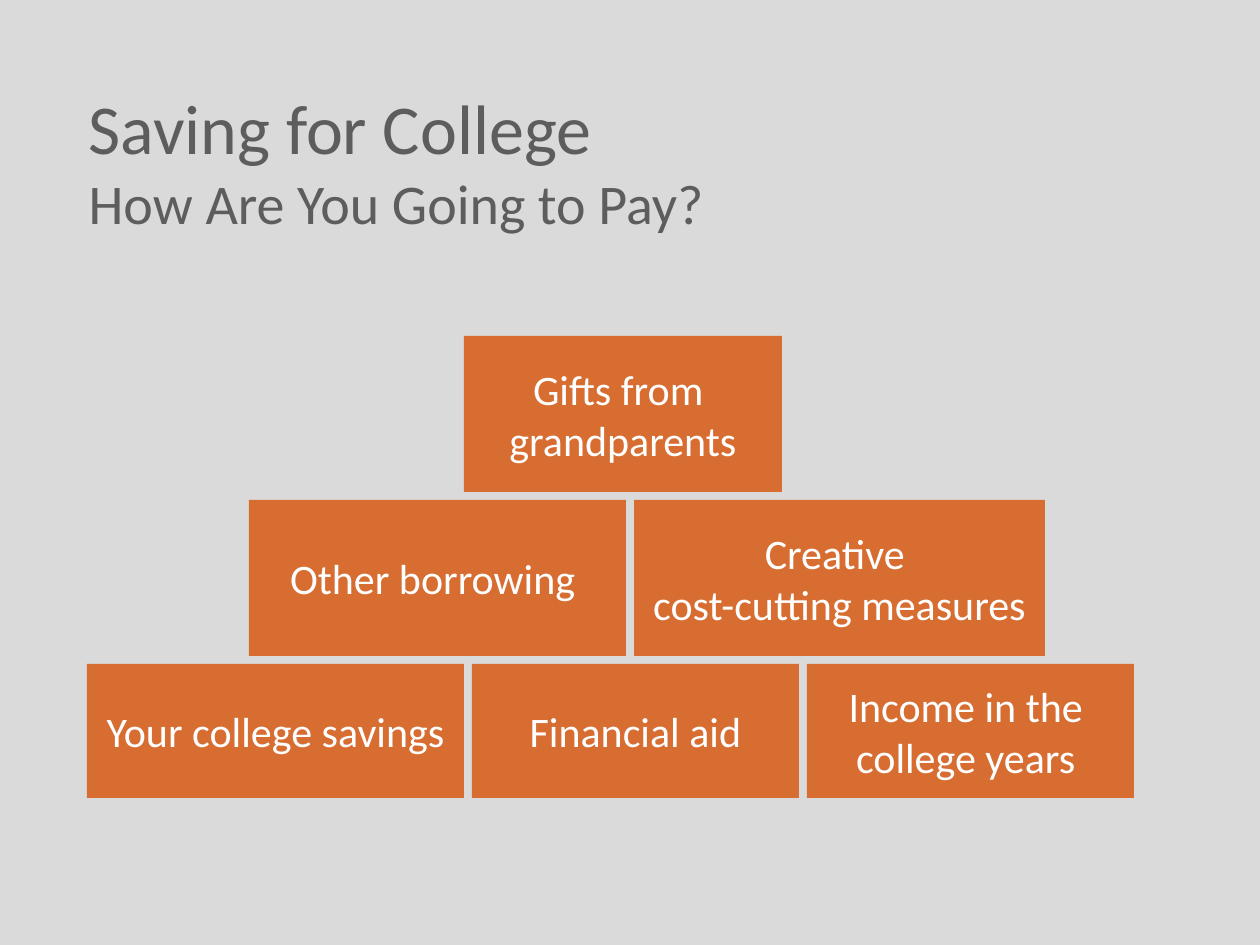
from dataclasses import dataclass

from pptx import Presentation
from pptx.dml.color import RGBColor
from pptx.enum.shapes import MSO_SHAPE
from pptx.enum.text import MSO_ANCHOR, MSO_AUTO_SIZE, PP_ALIGN
from pptx.util import Emu, Pt

PX = 914400 / 126  # EMU per px
GAP = 8
FONT = "Calibri"
BACKGROUND, GREY, ORANGE, WHITE = "DADADA", "5D5D5D", "D76D31", "FFFFFF"


@dataclass
class Block:
    width: int
    lines: list[str]


@dataclass
class Row:
    left: int
    height: int
    blocks: list[Block]


# Pyramid from top to bottom
ROWS = [
    Row(464, 156, [Block(318, ["Gifts from ", "grandparents"])]),
    Row(249, 156, [Block(377, ["Other borrowing "]),
                   Block(411, ["Creative ", "cost-cutting measures"])]),
    Row(87, 134, [Block(377, ["Your college savings"]),
                  Block(327, ["Financial aid"]),
                  Block(327, ["Income in the ", "college years "])]),
]


def px(n: int) -> Emu:
    return Emu(round(n * PX))


def color(value: str) -> RGBColor:
    return RGBColor.from_string(value)


def add_text(p, text: str, *, size: int, fill: str, align=PP_ALIGN.LEFT) -> None:
    p.alignment = align
    r = p.add_run()
    r.text = text
    r.font.name = FONT
    r.font.size = Pt(size)
    r.font.color.rgb = color(fill)


def add_block(slide, block: Block, x: int, y: int, height: int) -> None:
    sp = slide.shapes.add_shape(MSO_SHAPE.RECTANGLE, px(x), px(y),
                                px(block.width), px(height))
    sp.shadow.inherit = False
    sp.fill.solid()
    sp.fill.fore_color.rgb = color(ORANGE)
    sp.line.fill.background()
    tf = sp.text_frame
    tf.word_wrap = False
    tf.vertical_anchor = MSO_ANCHOR.MIDDLE
    for i, line in enumerate(block.lines):
        p = tf.add_paragraph() if i else tf.paragraphs[0]
        add_text(p, line, size=24, fill=WHITE, align=PP_ALIGN.CENTER)


def add_title(slide) -> None:
    sp = slide.shapes.title
    sp.left, sp.top, sp.width, sp.height = px(76), px(76), px(1007), px(168)
    tf = sp.text_frame
    tf.word_wrap = True
    tf.auto_size = MSO_AUTO_SIZE.NONE
    tf.vertical_anchor = MSO_ANCHOR.MIDDLE
    p = tf.paragraphs[0]
    add_text(p, "Saving for College", size=40, fill=GREY)
    p.add_line_break()
    add_text(p, "How Are You Going to Pay?", size=32, fill=GREY)


def main() -> None:
    prs = Presentation()
    prs.slide_width, prs.slide_height = px(1260), px(945)
    slide = prs.slides.add_slide(prs.slide_layouts[5])  # title only
    slide.background.fill.solid()
    slide.background.fill.fore_color.rgb = color(BACKGROUND)
    add_title(slide)

    # Rows of blocks with equal gaps
    y = 336
    for row in ROWS:
        x = row.left
        for block in row.blocks:
            add_block(slide, block, x, y, row.height)
            x += block.width + GAP
        y += row.height + GAP

    prs.save("out.pptx")


if __name__ == "__main__":
    main()
